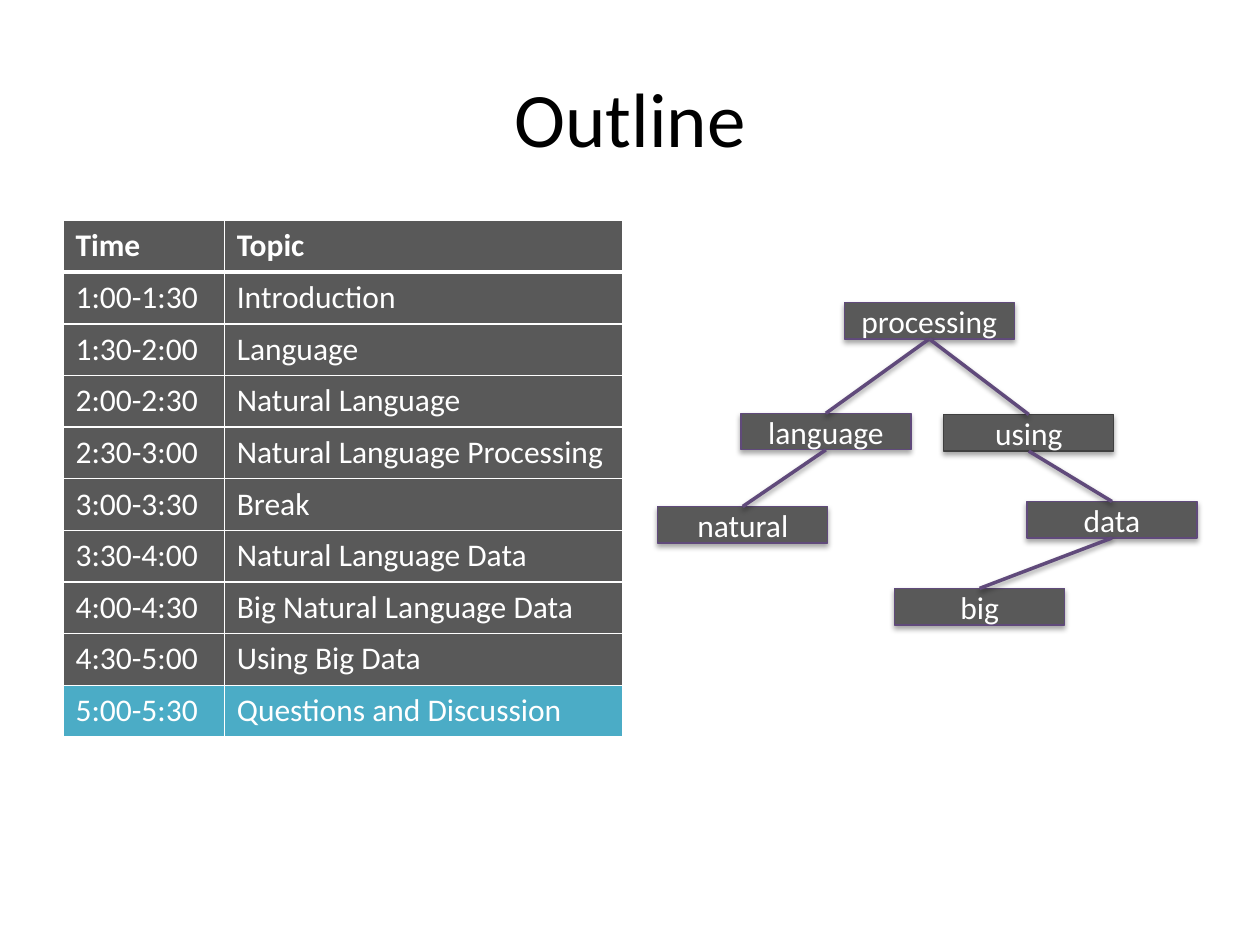
import dataclasses

import lxml.etree
import pptx
import pptx.dml.color
import pptx.enum.shapes
import pptx.enum.text
import pptx.oxml.ns
import pptx.util

Inches = pptx.util.Inches
Pt = pptx.util.Pt
qn = pptx.oxml.ns.qn
BOTTOM, TOP = 2, 0


@dataclasses.dataclass(frozen=True)
class Theme:
    """Colours, font and sizes of the slide."""
    font: str = "Calibri"
    title_size: int = 44
    body_size: int = 18
    black: str = "000000"
    white: str = "FFFFFF"
    grey: str = "595959"
    dark: str = "404040"
    purple: str = "604A7B"
    teal: str = "4BACC6"


THEME = Theme()

AGENDA = [
    ("Time", "Topic"),
    ("1:00-1:30", "Introduction"),
    ("1:30-2:00", "Language"),
    ("2:00-2:30", "Natural Language"),
    ("2:30-3:00", "Natural Language Processing"),
    ("3:00-3:30", "Break"),
    ("3:30-4:00", "Natural Language Data"),
    ("4:00-4:30", "Big Natural Language Data"),
    ("4:30-5:00", "Using Big Data"),
    ("5:00-5:30", "Questions and Discussion"),
]

NODES = {
    "natural": (5.22, 4.02, THEME.purple),
    "language": (5.88, 3.28, THEME.purple),
    "processing": (6.7, 2.4, THEME.purple),
    "using": (7.49, 3.29, THEME.dark),
    "big": (7.1, 4.67, THEME.purple),
    "data": (8.15, 3.98, THEME.purple),
}

EDGES = [
    ("processing", "language"),
    ("language", "natural"),
    ("processing", "using"),
    ("data", "big"),
    ("using", "data"),
]


def rgb(color):
    return pptx.dml.color.RGBColor.from_string(color)


class Deck:
    """Holds the theme and the current slide, and adds elements to it."""

    def __init__(self, prs, theme):
        self.theme = theme
        self.s = prs.slides.add_slide(prs.slide_layouts[5])

    def add_text(self, tf, text, size, color, align=None, bold=False):
        p = tf.paragraphs[0]
        p.alignment = align
        r = p.add_run()
        r.text = text
        r.font.name = self.theme.font
        r.font.size = Pt(size)
        r.font.bold = bold
        r.font.color.rgb = rgb(color)

    def shadow(self, sp, alpha, distance):
        props = sp._element.spPr
        effects = props.find(qn("a:effectLst"))
        if effects is None:
            effects = lxml.etree.SubElement(props, qn("a:effectLst"))
        outer = lxml.etree.SubElement(
            effects, qn("a:outerShdw"), blurRad=str(Pt(3.1)),
            dist=str(Pt(distance)), dir="5400000", rotWithShape="0")
        color = lxml.etree.SubElement(outer, qn("a:srgbClr"), val=self.theme.black)
        lxml.etree.SubElement(color, qn("a:alpha"), val=str(alpha * 1000))

    def title(self, text):
        sp = self.s.shapes.title
        sp.left, sp.top = Inches(0.5), Inches(0.3)
        sp.width, sp.height = Inches(9), Inches(1.25)
        sp.text_frame.vertical_anchor = pptx.enum.text.MSO_ANCHOR.MIDDLE
        self.add_text(sp.text_frame, text, self.theme.title_size, self.theme.black,
                      pptx.enum.text.PP_ALIGN.CENTER)

    def border(self, cell, side, width):
        ln = lxml.etree.SubElement(cell._tc.get_or_add_tcPr(), qn(f"a:ln{side}"),
                                   w=str(Pt(width)))
        fill = lxml.etree.SubElement(ln, qn("a:solidFill"))
        lxml.etree.SubElement(fill, qn("a:srgbClr"), val=self.theme.white)

    def table(self, rows, left, top, widths, row_height):
        table = self.s.shapes.add_table(
            len(rows), len(widths), Inches(left), Inches(top),
            Inches(sum(widths)), Inches(row_height * len(rows))).table
        for column, width in zip(table.columns, widths):
            column.width = Inches(width)
        last = len(rows) - 1
        for i, row in enumerate(rows):
            for j, text in enumerate(row):
                cell = table.cell(i, j)
                for side in "LRTB":
                    under_header = (i, side) in ((0, "B"), (1, "T"))
                    self.border(cell, side, 3 if under_header else 1)
                cell.fill.solid()
                cell.fill.fore_color.rgb = rgb(
                    self.theme.teal if i == last else self.theme.grey)
                self.add_text(cell.text_frame, text, self.theme.body_size,
                              self.theme.white, bold=i == 0)

    def node(self, text, left, top, line):
        sp = self.s.shapes.add_shape(
            pptx.enum.shapes.MSO_SHAPE.RECTANGLE,
            Inches(left), Inches(top), Inches(1.35), Inches(0.29))
        sp.fill.solid()
        sp.fill.fore_color.rgb = rgb(self.theme.grey)
        sp.line.color.rgb = rgb(line)
        sp.line.width = Pt(0.75)
        sp.shadow.inherit = False
        self.shadow(sp, 35, 1.8)
        sp.text_frame.vertical_anchor = pptx.enum.text.MSO_ANCHOR.MIDDLE
        self.add_text(sp.text_frame, text, self.theme.body_size, self.theme.white,
                      pptx.enum.text.PP_ALIGN.CENTER)
        return sp

    def edge(self, parent, child):
        sp = self.s.shapes.add_connector(
            pptx.enum.shapes.MSO_CONNECTOR.STRAIGHT, 0, 0, 0, 0)
        sp.begin_connect(parent, BOTTOM)
        sp.end_connect(child, TOP)
        sp.line.color.rgb = rgb(self.theme.purple)
        sp.line.width = Pt(2)
        self.shadow(sp, 38, 1.6)


def main():
    prs = pptx.Presentation()
    prs.slide_width, prs.slide_height = Inches(10), Inches(7.5)
    deck = Deck(prs, THEME)
    deck.title("Outline")
    deck.table(AGENDA, 0.5, 1.75, (1.28, 3.16), 0.41)
    nodes = {word: deck.node(word, *place) for word, place in NODES.items()}
    for parent, child in EDGES:
        deck.edge(nodes[parent], nodes[child])
    prs.save("out.pptx")


if __name__ == "__main__":
    main()
